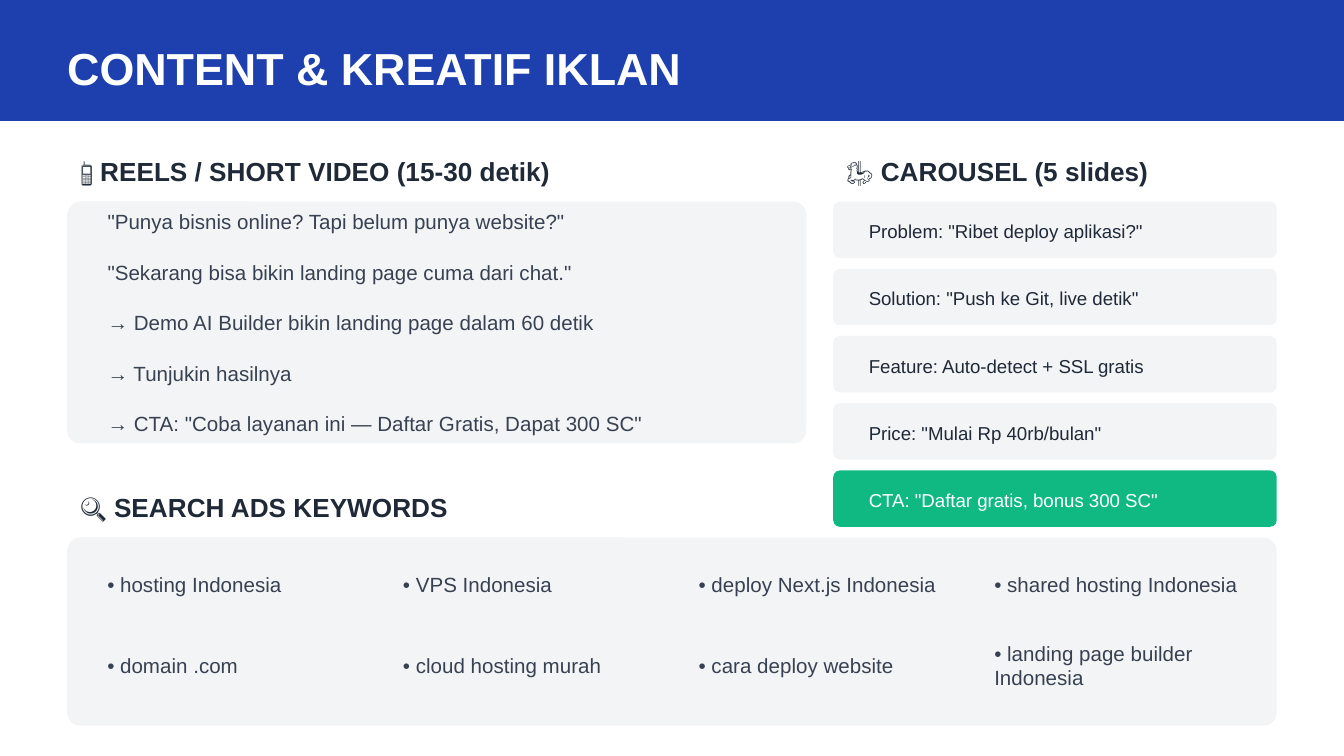
import dataclasses

import lxml.etree
import pptx
import pptx.dml.color
import pptx.enum.shapes
import pptx.enum.text
import pptx.oxml.ns
import pptx.util

Pt = pptx.util.Pt
FONT = "Arial"
COLORS = {
    "header": "1E40AF",
    "panel": "F3F4F6",
    "accent": "10B981",
    "dark": "1F2937",
    "body": "374151",
    "white": "FFFFFF",
}


@dataclasses.dataclass
class Area:
    left: float
    top: float
    width: float
    height: float


@dataclasses.dataclass
class TextStyle:
    size: float
    color: str
    bold: bool = False


@dataclasses.dataclass
class Heading:
    text: str
    area: Area


@dataclasses.dataclass
class Card:
    text: str
    fill: str = "panel"
    color: str = "dark"


TITLE_STYLE = TextStyle(24, "white", True)
HEADING_STYLE = TextStyle(14, "dark", True)
BODY_STYLE = TextStyle(11, "body")

HEADINGS = [
    Heading("📱 REELS / SHORT VIDEO (15-30 detik)", Area(36, 79.2, 360, 25.2)),
    Heading("🎠 CAROUSEL (5 slides)", Area(446.4, 79.2, 252, 25.2)),
    Heading("🔍 SEARCH ADS KEYWORDS", Area(36, 259.2, 648, 25.2)),
]
REELS_LINES = [
    '"Punya bisnis online? Tapi belum punya website?"',
    '"Sekarang bisa bikin landing page cuma dari chat."',
    "→ Demo AI Builder bikin landing page dalam 60 detik",
    "→ Tunjukin hasilnya",
    '→ CTA: "Coba layanan ini — Daftar Gratis, Dapat 300 SC"',
]
CARDS = [
    Card('Problem: "Ribet deploy aplikasi?"'),
    Card('Solution: "Push ke Git, live detik"'),
    Card("Feature: Auto-detect + SSL gratis"),
    Card('Price: "Mulai Rp 40rb/bulan"'),
    Card('CTA: "Daftar gratis, bonus 300 SC"', "accent", "white"),
]
KEYWORD_ROWS = [
    ["hosting Indonesia", "VPS Indonesia", "deploy Next.js Indonesia", "shared hosting Indonesia"],
    ["domain .com", "cloud hosting murah", "cara deploy website", "landing page builder Indonesia"],
]


def rgb(name: str) -> pptx.dml.color.RGBColor:
    return pptx.dml.color.RGBColor.from_string(COLORS[name])


def place(shape, area: Area) -> None:
    shape.left, shape.top = Pt(area.left), Pt(area.top)
    shape.width, shape.height = Pt(area.width), Pt(area.height)


def write(shape, lines: list[str], style: TextStyle, gap: float = 0) -> None:
    frame = shape.text_frame
    frame.text = "\n".join(lines)
    frame.word_wrap = True
    frame.auto_size = pptx.enum.text.MSO_AUTO_SIZE.NONE
    frame.vertical_anchor = pptx.enum.text.MSO_ANCHOR.MIDDLE
    for index, para in enumerate(frame.paragraphs):
        para.alignment = pptx.enum.text.PP_ALIGN.LEFT
        para.space_before = Pt(gap if index else 0)
        for span in para.runs:
            span.font.name = FONT
            span.font.size = Pt(style.size)
            span.font.bold = style.bold
            span.font.color.rgb = rgb(style.color)


def add_panel(page, area: Area, fill: str, radius: float = 0):
    kinds = pptx.enum.shapes.MSO_SHAPE
    kind = kinds.ROUNDED_RECTANGLE if radius else kinds.RECTANGLE
    panel = page.shapes.add_shape(
        kind, Pt(area.left), Pt(area.top), Pt(area.width), Pt(area.height)
    )
    if radius:
        panel.adjustments[0] = radius / min(area.width, area.height)
    panel.shadow.inherit = False
    panel.fill.solid()
    panel.fill.fore_color.rgb = rgb(fill)
    panel.line.fill.background()
    return panel


def add_label(page, text: str, area: Area, style: TextStyle) -> None:
    box = page.shapes.add_textbox(
        Pt(area.left), Pt(area.top), Pt(area.width), Pt(area.height)
    )
    write(box, [text], style)


def add_title(page) -> None:
    title = page.shapes.title
    header = add_panel(page, Area(0, 0, 720, 64.8), "header")
    title.element.addprevious(header.element)
    place(title, Area(36, 14.4, 648, 43.2))
    write(title, ["CONTENT & KREATIF IKLAN"], TITLE_STYLE)
    frame = title.text_frame
    frame.margin_left = frame.margin_right = 0
    frame.margin_top = frame.margin_bottom = 0


def add_reels(page) -> None:
    body = page.placeholders[1]
    panel = add_panel(page, Area(36, 108, 396, 129.6), "panel", 7.2)
    body.element.addprevious(panel.element)
    place(body, Area(50.4, 118.8, 367.2, 108))
    write(body, REELS_LINES, BODY_STYLE, 13.8)
    for para in body.text_frame.paragraphs:
        properties = para._p.get_or_add_pPr()
        properties.set("marL", "0")
        properties.set("indent", "0")
        lxml.etree.SubElement(properties, pptx.oxml.ns.qn("a:buNone"))


def add_carousel(page) -> None:
    for index, card in enumerate(CARDS):
        area = Area(446.4, 108 + index * 36, 237.6, 30.24)
        panel = add_panel(page, area, card.fill, 3.6)
        write(panel, [card.text], TextStyle(10, card.color))
        panel.text_frame.margin_left = Pt(18)
        panel.text_frame.margin_top = Pt(1.44)
        panel.text_frame.margin_bottom = 0


def add_keywords(page) -> None:
    add_panel(page, Area(36, 288, 648, 100.8), "panel", 7.2)
    for row, keywords in enumerate(KEYWORD_ROWS):
        for column, keyword in enumerate(keywords):
            area = Area(50.4 + column * 158.4, 298.8 + row * 43.2, 151.2, 28.8)
            add_label(page, f"• {keyword}", area, BODY_STYLE)


def main() -> None:
    deck = pptx.Presentation()
    deck.slide_width, deck.slide_height = Pt(720), Pt(405)
    page = deck.slides.add_slide(deck.slide_layouts[1])
    add_title(page)
    add_reels(page)
    add_carousel(page)
    add_keywords(page)
    for heading in HEADINGS:
        add_label(page, heading.text, heading.area, HEADING_STYLE)
    deck.save("out.pptx")


if __name__ == "__main__":
    main()
